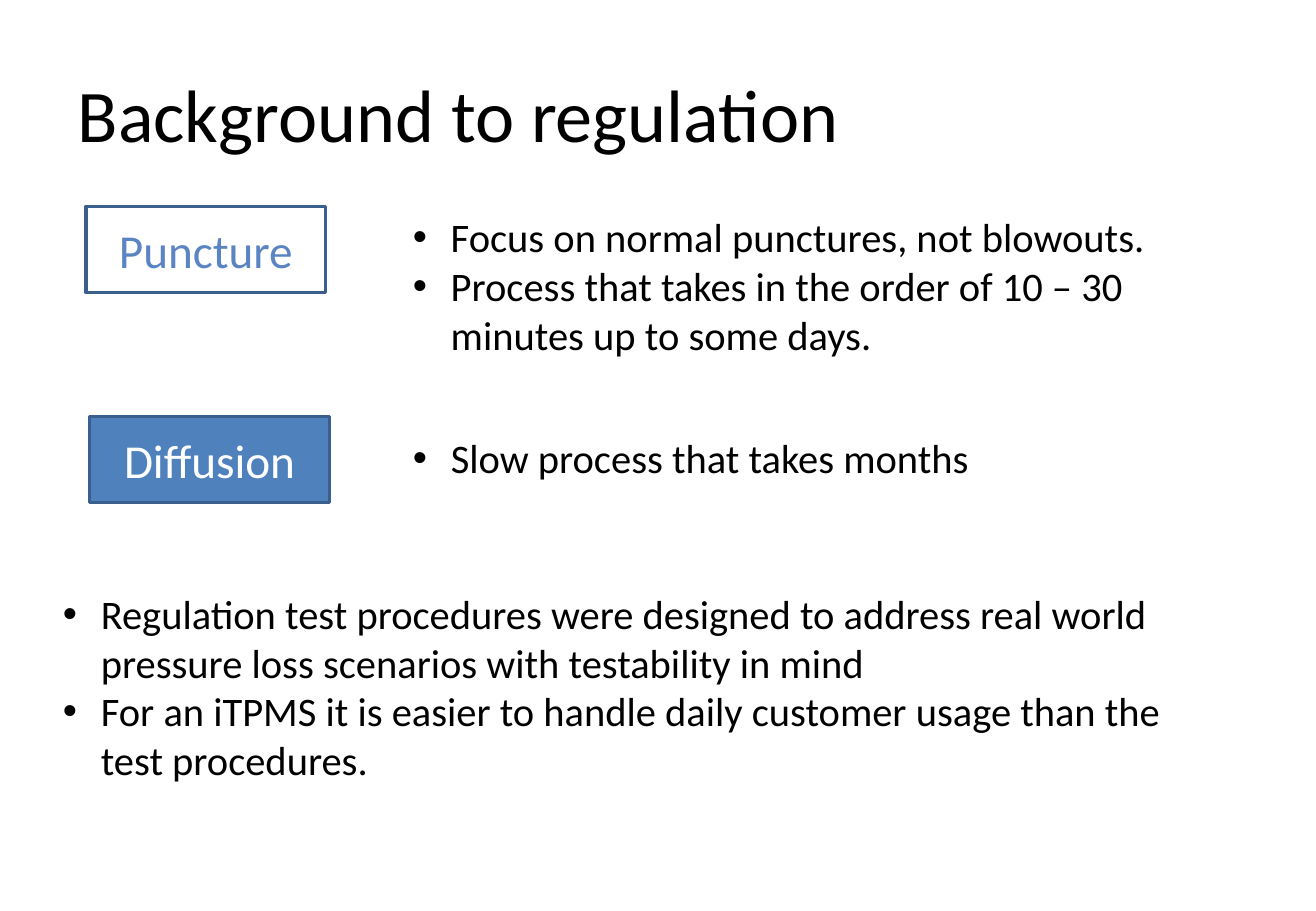
from dataclasses import dataclass

from lxml.etree import SubElement
from pptx import Presentation
from pptx.dml.color import RGBColor
from pptx.enum.shapes import MSO_SHAPE
from pptx.enum.text import MSO_ANCHOR, PP_ALIGN
from pptx.oxml.ns import qn
from pptx.util import Pt


@dataclass(frozen=True)
class Theme:
    font: str = "Calibri"
    black: str = "000000"
    white: str = "FFFFFF"
    blue: str = "4F81BD"
    label: str = "5A85C2"
    edge: str = "3A5F8C"
    title: int = 44
    tag: int = 28
    body: int = 24


THEME = Theme()


def style(item, values):
    for name, value in values.items():
        setattr(item, name, value)


def write(para, text, size, color):
    run = para.add_run()
    run.text = text
    style(run.font, {"name": THEME.font, "size": Pt(size)})
    run.font.color.rgb = RGBColor.from_string(color)


def add_text(slide, box):
    frame = slide.shapes.add_textbox(*map(Pt, box)).text_frame
    frame.word_wrap = True
    return frame


def add_title(slide, box, text):
    frame = add_text(slide, box)
    frame.vertical_anchor = MSO_ANCHOR.MIDDLE
    write(frame.paragraphs[0], text, THEME.title, THEME.black)


def add_tag(slide, box, text, color, fill=None):
    shape = slide.shapes.add_shape(MSO_SHAPE.RECTANGLE, *map(Pt, box))
    shape.shadow.inherit = False
    if fill:
        shape.fill.solid()
        shape.fill.fore_color.rgb = RGBColor.from_string(fill)
    else:
        shape.fill.background()
    shape.line.width = Pt(2)
    shape.line.color.rgb = RGBColor.from_string(THEME.edge)
    frame = shape.text_frame
    style(frame, {"word_wrap": True, "vertical_anchor": MSO_ANCHOR.MIDDLE})
    para = frame.paragraphs[0]
    style(para, {"alignment": PP_ALIGN.CENTER, "space_before": Pt(5.6)})
    write(para, text, THEME.tag, color)


def add_list(slide, box, lines):
    frame = add_text(slide, box)
    for index, line in enumerate(lines):
        para = frame.add_paragraph() if index else frame.paragraphs[0]
        props = para._p.get_or_add_pPr()
        props.set("marL", str(Pt(22.5)))
        props.set("indent", str(-Pt(22.5)))
        SubElement(props, qn("a:buFont"), typeface="Arial")
        SubElement(props, qn("a:buChar"), char="•")
        write(para, line, THEME.body, THEME.black)


def main():
    deck = Presentation()
    style(deck, {"slide_width": Pt(780), "slide_height": Pt(540)})
    slide = deck.slides.add_slide(deck.slide_layouts[6])

    add_title(slide, (39, 21.6, 702, 90), "Background to regulation")
    add_tag(slide, (51, 122.4, 142, 51), "Puncture", THEME.label)
    add_tag(slide, (53.2, 247, 142, 51), "Diffusion", THEME.white, THEME.blue)
    add_list(slide, (237.6, 122.4, 471, 94.5), [
        "Focus on normal punctures, not blowouts.",
        "Process that takes in the order of 10 – 30 minutes up to some days.",
    ])
    add_list(slide, (237.6, 253.4, 430, 36), ["Slow process that takes months"])
    add_list(slide, (30.2, 345.6, 691, 124), [
        "Regulation test procedures were designed to address real world "
        "pressure loss scenarios with testability in mind",
        "For an iTPMS it is easier to handle daily customer usage than the "
        "test procedures.",
    ])
    deck.save("out.pptx")


if __name__ == "__main__":
    main()
